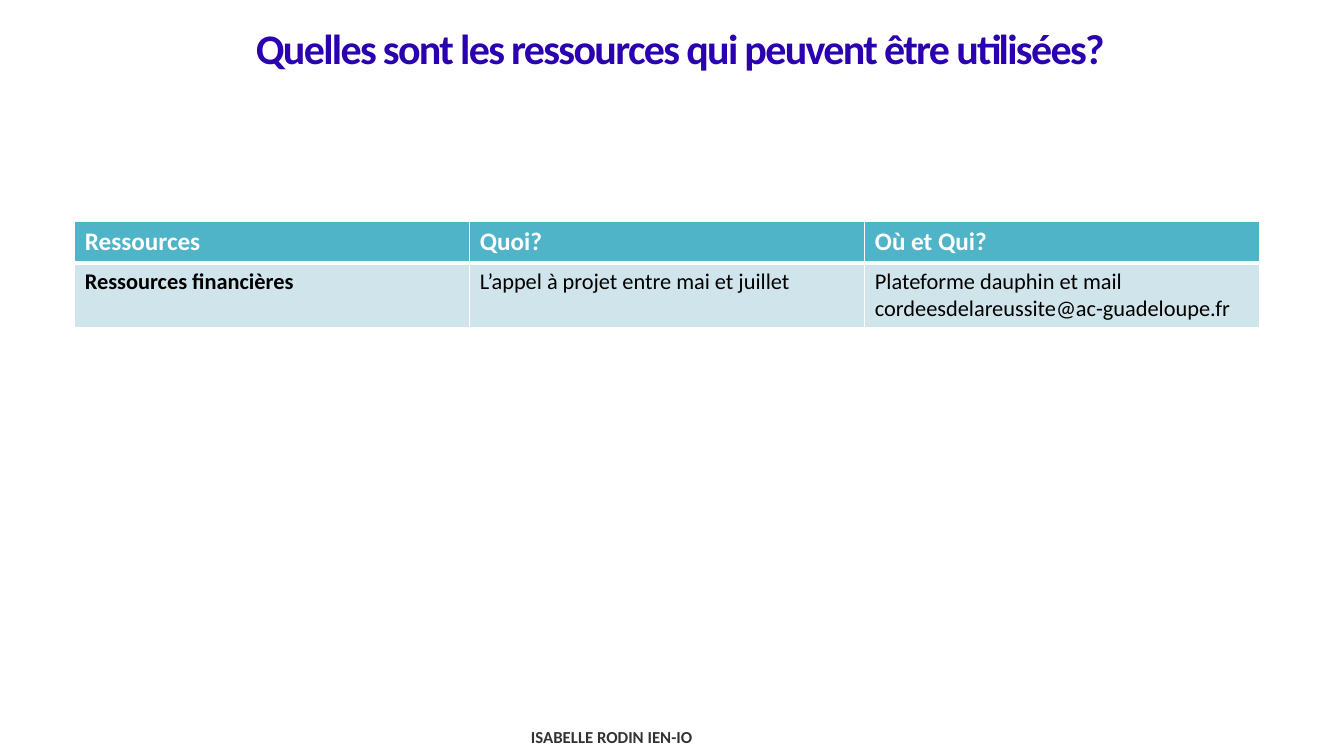
from lxml import etree
from pptx import Presentation
from pptx.dml.color import RGBColor
from pptx.enum.text import MSO_ANCHOR, MSO_AUTO_SIZE, PP_ALIGN
from pptx.oxml.ns import qn
from pptx.util import Pt

MIDDLE = MSO_ANCHOR.MIDDLE
NO_AUTOFIT = MSO_AUTO_SIZE.NONE
CENTER = PP_ALIGN.CENTER
LEFT = PP_ALIGN.LEFT

WHITE = RGBColor(0xFF, 0xFF, 0xFF)
BLACK = RGBColor(0x00, 0x00, 0x00)
DARK_GREY = RGBColor(0x33, 0x33, 0x33)
VIOLET = RGBColor(0x2A, 0x00, 0xB0)
TEAL = RGBColor(0x50, 0xB4, 0xC8)
PALE_TEAL = RGBColor(0xD0, 0xE5, 0xEB)

FONT = "Calibri"
TITLE_LAYOUT = 5
THIN, THICK = 1, 3

RESOURCES = [
    ["Ressources", "Quoi?", "Où et Qui?"],
    [
        "Ressources financières",
        "L’appel à projet entre mai et juillet",
        "Plateforme dauphin et mail cordeesdelareussite@ac-guadeloupe.fr",
    ],
]


def write_text(frame, text, size, color, bold=False, align=LEFT,
               line_spacing=None, letter_spacing=None):
    """Write one formatted paragraph into a text frame."""
    frame.word_wrap = True
    para = frame.paragraphs[0]
    para.alignment = align
    if line_spacing:
        para.line_spacing = line_spacing
    span = para.add_run()
    span.text = text
    span.font.name = FONT
    span.font.size = Pt(size)
    span.font.bold = bold
    span.font.color.rgb = color
    if letter_spacing:
        span.font._element.set("spc", str(round(letter_spacing * 100)))


def place(shape, left, top, width, height):
    shape.left, shape.top = Pt(left), Pt(top)
    shape.width, shape.height = Pt(width), Pt(height)


def set_borders(cell, top, bottom):
    """Draw white borders; the side borders are always thin."""
    properties = cell._tc.get_or_add_tcPr()
    widths = {"a:lnL": THIN, "a:lnR": THIN, "a:lnT": top, "a:lnB": bottom}
    for position, (tag, width) in enumerate(widths.items()):
        line = etree.Element(qn(tag), w=str(Pt(width)))
        fill = etree.SubElement(line, qn("a:solidFill"))
        etree.SubElement(fill, qn("a:srgbClr"), val=str(WHITE))
        properties.insert(position, line)


def add_title(page, text):
    title = page.shapes.title
    place(title, 62, 13.7, 848, 46.8)
    title.text_frame.auto_size = NO_AUTOFIT
    title.text_frame.vertical_anchor = MIDDLE
    write_text(title.text_frame, text, size=30, color=VIOLET, bold=True,
               align=CENTER, line_spacing=0.85, letter_spacing=-1.2)


def add_resource_table(page, rows):
    heights = [29.5, 45.4]
    table = page.shapes.add_table(len(rows), len(rows[0]), Pt(53.4), Pt(158.4),
                                  Pt(846.6), Pt(sum(heights))).table
    for row_index, texts in enumerate(rows):
        table.rows[row_index].height = Pt(heights[row_index])
        header = row_index == 0
        for column_index, text in enumerate(texts):
            cell = table.cell(row_index, column_index)
            cell.fill.solid()
            cell.fill.fore_color.rgb = TEAL if header else PALE_TEAL
            # The edge shared by header and body is thick
            set_borders(cell, top=THIN if header else THICK,
                        bottom=THICK if header else THIN)
            write_text(cell.text_frame, text, size=18 if header else 16,
                       color=WHITE if header else BLACK,
                       bold=header or column_index == 0)


def add_footer(page, text):
    box = page.shapes.add_textbox(Pt(239), Pt(517), Pt(396), Pt(18))
    box.text_frame.vertical_anchor = MIDDLE
    write_text(box.text_frame, text, size=12, color=DARK_GREY, bold=True,
               align=CENTER)


def main():
    deck = Presentation()
    deck.slide_width, deck.slide_height = Pt(960), Pt(540)
    page = deck.slides.add_slide(deck.slide_layouts[TITLE_LAYOUT])

    add_title(page, "Quelles sont les ressources qui peuvent être utilisées?")
    add_resource_table(page, RESOURCES)
    add_footer(page, "ISABELLE RODIN IEN-IO")

    deck.save("out.pptx")


if __name__ == "__main__":
    main()
